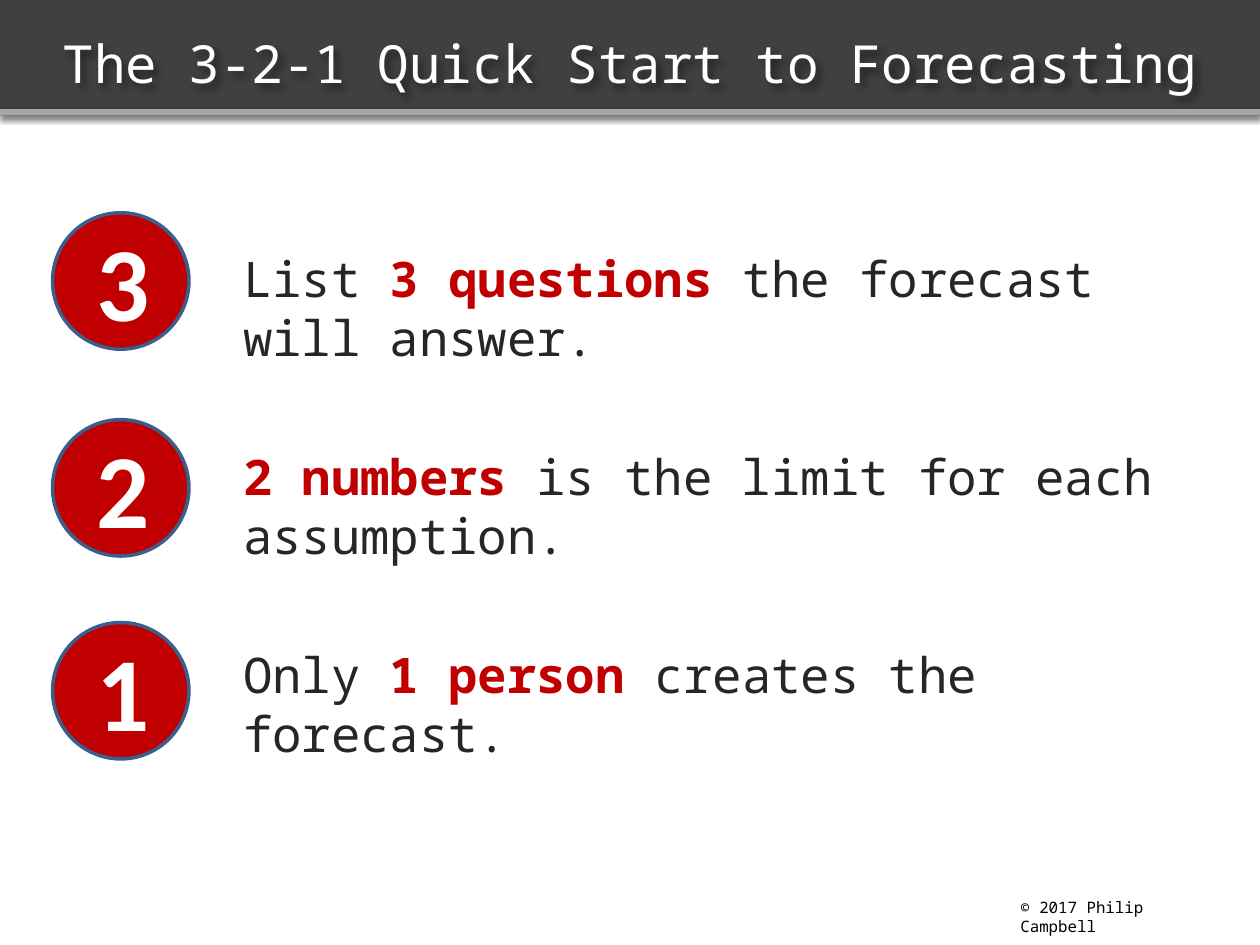
from lxml import etree
from pptx import Presentation
from pptx.dml.color import RGBColor
from pptx.enum.shapes import MSO_SHAPE
from pptx.enum.text import MSO_ANCHOR, PP_ALIGN
from pptx.oxml.ns import qn
from pptx.util import Cm, Pt

RECTANGLE, OVAL = MSO_SHAPE.RECTANGLE, MSO_SHAPE.OVAL
TOP, MIDDLE = MSO_ANCHOR.TOP, MSO_ANCHOR.MIDDLE
LEFT, CENTER = PP_ALIGN.LEFT, PP_ALIGN.CENTER
MONO = "Noto Sans Mono"
RED, WHITE, DARK = "C00000", "FFFFFF", "262626"
color = RGBColor.from_string


def add_text(shapes, place, paragraphs, style, align=LEFT, anchor=TOP, gap=0):
    """Each paragraph is a list of (text, format values that differ from style)."""
    box = shapes.add_textbox(*(Cm(length) for length in place))
    frame = box.text_frame
    frame.word_wrap = True
    frame.vertical_anchor = anchor
    for index, pieces in enumerate(paragraphs):
        para = frame.paragraphs[0] if index == 0 else frame.add_paragraph()
        para.alignment = align
        if index:
            para.space_before = Pt(gap)
        for text, changes in pieces:
            span = para.add_run()
            span.text = text
            values = {**style, **changes}
            span.font.color.rgb = color(values.pop("color"))
            for name, value in values.items():
                setattr(span.font, name, value)
    return box


def add_shadow(shape, blur, distance, degrees, opacity):
    shape.shadow.inherit = False
    effects = shape._element.spPr.find(qn("a:effectLst"))
    outer = etree.SubElement(effects, qn("a:outerShdw"), blurRad=str(Pt(blur)),
                             dist=str(Pt(distance)), dir=str(degrees * 60000),
                             rotWithShape="0")
    shade = etree.SubElement(outer, qn("a:srgbClr"), val="000000")
    etree.SubElement(shade, qn("a:alpha"), val=str(opacity * 1000))


deck = Presentation()
deck.slide_width, deck.slide_height = Cm(25.4), Cm(19.05)
page = deck.slides.add_slide(deck.slide_layouts[6])

# Three steps, with the key words in red
key = {"color": RED, "bold": True}
steps = [
    [("List ", {}), ("3 questions", key), (" the forecast will answer.", {})],
    [("2 numbers", key), (" is the limit for each assumption.", {})],
    [("Only ", {}), ("1 person", key), (" creates the forecast.", {})],
]
add_text(page.shapes, (4.65, 4.88, 19.89, 12.5), steps,
         {"name": MONO, "size": Pt(28), "color": DARK, "bold": False}, gap=46)

# Header band and its lower edge
for top, height, fill in [(0, 2.33, "404040"), (2.2, 0.13, "A6A6A6")]:
    band = page.shapes.add_shape(RECTANGLE, 0, Cm(top), deck.slide_width, Cm(height))
    band.fill.solid()
    band.fill.fore_color.rgb = color(fill)
    band.line.fill.background()
    add_shadow(band, blur=3.1, distance=1.8, degrees=90, opacity=35)

# Title
title = add_text(page.shapes, (0, 0, 25.4, 2.54),
                 [[("The 3-2-1 Quick Start to Forecasting", {})]],
                 {"name": MONO, "size": Pt(30), "color": WHITE}, CENTER, MIDDLE)
add_shadow(title, blur=4, distance=3, degrees=45, opacity=45)

# Copyright line
add_text(page.shapes, (20.32, 17.98, 4.65, 0.64), [[("© 2017 Philip Campbell", {})]],
         {"name": MONO, "size": Pt(9), "color": "000000"})

# Numbered circles
for number, top in [("1", 12.55), ("2", 8.46), ("3", 4.29)]:
    badge = page.shapes.add_group_shape()
    circle = badge.shapes.add_shape(OVAL, Cm(1.06), Cm(top), Cm(2.75), Cm(2.75))
    circle.fill.solid()
    circle.fill.fore_color.rgb = color(RED)
    circle.line.color.rgb = color("3A5F8C")
    circle.line.width = Pt(2)
    circle.shadow.inherit = False
    add_text(badge.shapes, (1.7, top - 0.05, 1.48, 2.82), [[(number, {})]],
             {"name": "Calibri", "size": Pt(60), "color": WHITE, "bold": True})

deck.save("out.pptx")
